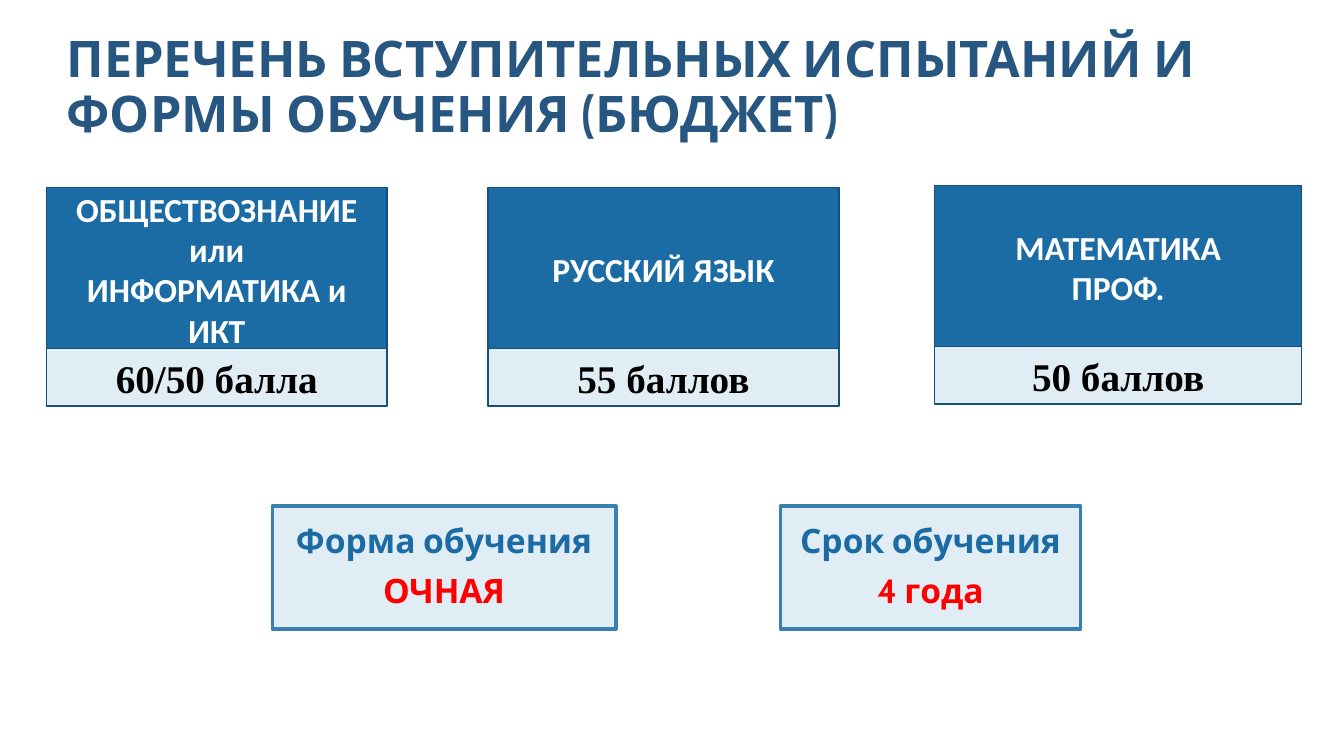
"""Build a slide listing entrance exams and forms of study."""
from pptx import Presentation
from pptx.dml.color import RGBColor
from pptx.enum.shapes import MSO_SHAPE
from pptx.enum.text import MSO_ANCHOR, MSO_AUTO_SIZE, PP_ALIGN
from pptx.oxml.ns import qn
from pptx.util import Pt

PX = 9144
RECT = MSO_SHAPE.RECTANGLE
MIDDLE = MSO_ANCHOR.MIDDLE
SHRINK = MSO_AUTO_SIZE.TEXT_TO_FIT_SHAPE
LEFT, CENTER = PP_ALIGN.LEFT, PP_ALIGN.CENTER

COLORS = {
    "title": "275680",
    "blue": "1B6CA4",
    "pale": "E1EDF5",
    "edge": "145079",
    "frame": "3880B1",
    "red": "FF0000",
    "white": "FFFFFF",
    "black": "000000",
}

EXAMS = [
    (46, 186, 338, ["ОБЩЕСТВОЗНАНИЕ", "или", "ИНФОРМАТИКА и ИКТ"], "60/50 балла"),
    (484, 186, 348, ["РУССКИЙ ЯЗЫК"], "55 баллов"),
    (927, 184, 364, ["МАТЕМАТИКА", "ПРОФ."], "50 баллов"),
]
TERMS = [
    (270, 341, "Форма обучения", "ОЧНАЯ"),
    (774, 298, "Срок обучения", "4 года"),
]


def color(name):
    return RGBColor.from_string(COLORS[name])


def paint(shape, fill, line, width):
    shape.fill.solid()
    shape.fill.fore_color.rgb = color(fill)
    shape.line.color.rgb = color(line)
    shape.line.width = Pt(width)


def place(shape, x, y, w, h):
    shape.left, shape.top = x * PX, y * PX
    shape.width, shape.height = w * PX, h * PX


def write(frame, lines, size, font, align=CENTER, pitch=1.0, gap=0):
    """Write (text, colour) lines as bold paragraphs."""
    frame.word_wrap = True
    frame.vertical_anchor = MIDDLE
    for i, (text, tint) in enumerate(lines):
        para = frame.add_paragraph() if i else frame.paragraphs[0]
        para.alignment = align
        para.line_spacing = pitch
        para.space_before = Pt(gap if i else 0)
        run = para.add_run()
        run.text = text
        run.font.size = Pt(size)
        run.font.name = font
        run.font.bold = True
        run.font.color.rgb = color(tint)


def add_box(slide, x, y, w, h, fill, lines, size, font):
    box = slide.shapes.add_shape(RECT, x * PX, y * PX, w * PX, h * PX)
    box.shadow.inherit = False
    paint(box, fill, "edge", 1)
    write(box.text_frame, lines, size, font)


def add_exam(slide, x, y, w, names, score):
    heads = [(name, "white") for name in names]
    add_box(slide, x, y, w, 162, "blue", heads, 24, "Calibri")
    add_box(slide, x, y + 160, w, 57, "pale", [(score, "black")], 28,
            "Times New Roman")


def fill_term(holder, x, w, label, value):
    place(holder, x, 502, w, 122)
    paint(holder, "pale", "frame", 2.25)
    frame = holder.text_frame
    write(frame, [(label, "blue"), (value, "red")], 24, "Cabin",
          pitch=0.9, gap=10)
    frame.auto_size = SHRINK
    for para in frame.paragraphs:
        props = para._p.get_or_add_pPr()
        props.set("marL", "0")
        props.set("indent", "0")
        props.append(props.makeelement(qn("a:buNone"), {}))


def main():
    deck = Presentation()
    deck.slide_width, deck.slide_height = 1333 * PX, 750 * PX
    slide = deck.slides.add_slide(deck.slide_layouts[3])
    title, *bodies = list(slide.placeholders)[:3]
    place(title, 56, 28, 1220, 120)
    text = "ПЕРЕЧЕНЬ ВСТУПИТЕЛЬНЫХ ИСПЫТАНИЙ И ФОРМЫ ОБУЧЕНИЯ (БЮДЖЕТ)"
    write(title.text_frame, [(text, "title")], 36, "Cabin", LEFT, 0.9)
    title.text_frame.auto_size = SHRINK
    for holder, term in zip(bodies, TERMS):
        fill_term(holder, *term)
    for exam in EXAMS:
        add_exam(slide, *exam)
    deck.save("out.pptx")


if __name__ == "__main__":
    main()
